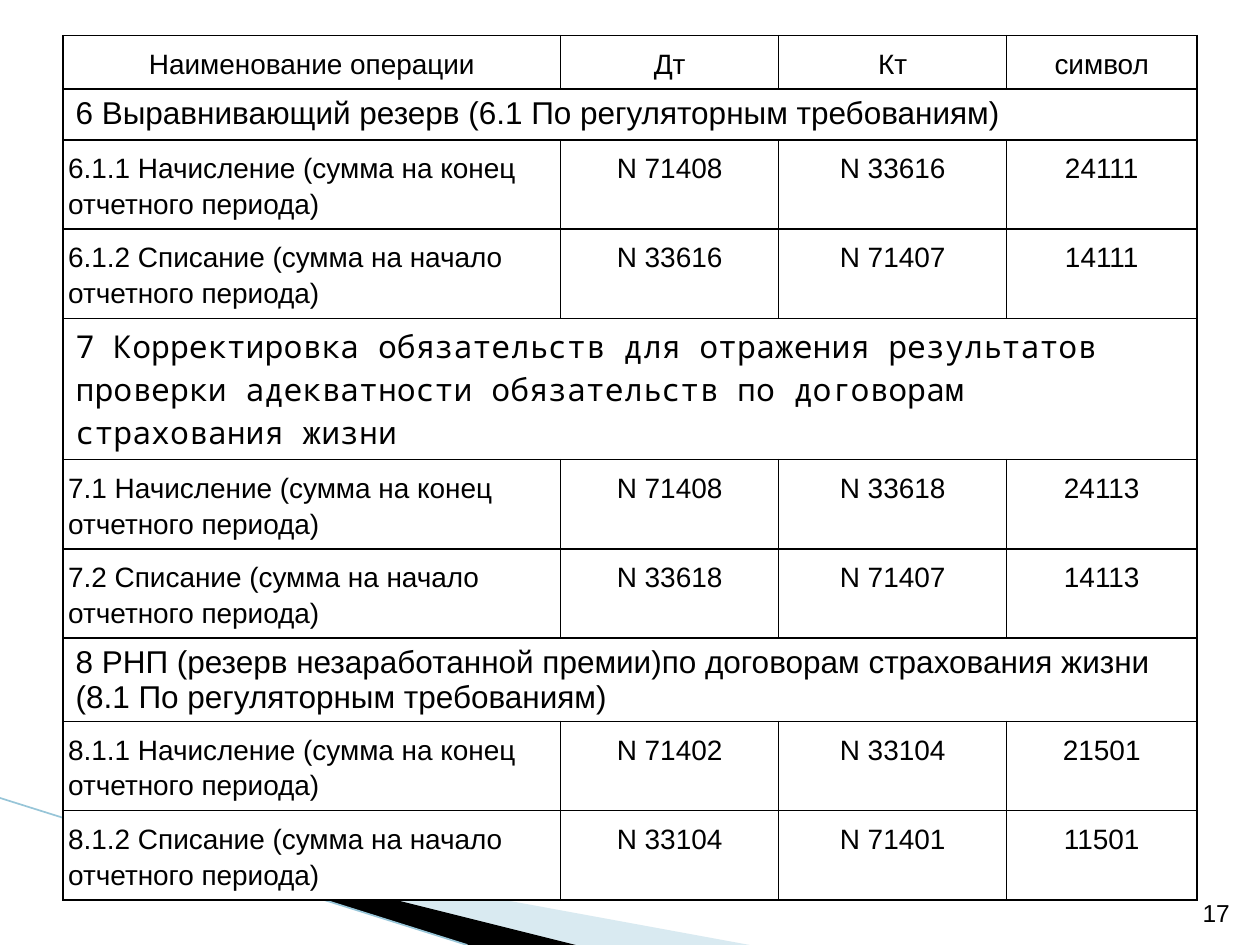
from lxml import etree
from pptx import Presentation
from pptx.dml.color import RGBColor
from pptx.enum.shapes import MSO_CONNECTOR
from pptx.enum.text import MSO_ANCHOR, PP_ALIGN
from pptx.oxml.ns import qn
from pptx.util import Pt

LEFT, CENTER, RIGHT = PP_ALIGN.LEFT, PP_ALIGN.CENTER, PP_ALIGN.RIGHT
BOTTOM = MSO_ANCHOR.BOTTOM
STRAIGHT = MSO_CONNECTOR.STRAIGHT

COLORS = {"ink": "000000", "paper": "FFFFFF", "wedge": "A0CBDC", "line": "97C5D8"}
FONT, MONO = "Arial", "Noto Sans Mono"

# Content: each section has a title, its font and its operations
HEADER = ("Наименование операции", "Дт", "Кт", "символ")
ACCRUAL = "Начисление (сумма на конец отчетного периода)"
RELEASE = "Списание (сумма на начало отчетного периода)"
SECTIONS = [
    ("6 Выравнивающий резерв (6.1 По регуляторным требованиям)", FONT, [
        (f"6.1.1 {ACCRUAL}", "N 71408", "N 33616", "24111"),
        (f"6.1.2 {RELEASE}", "N 33616", "N 71407", "14111"),
    ]),
    ("7 Корректировка обязательств для отражения результатов проверки "
     "адекватности обязательств по договорам страхования жизни", MONO, [
        (f"7.1 {ACCRUAL}", "N 71408", "N 33618", "24113"),
        (f"7.2 {RELEASE}", "N 33618", "N 71407", "14113"),
    ]),
    ("8 РНП (резерв незаработанной премии)по договорам страхования жизни "
     "(8.1 По регуляторным требованиям)", FONT, [
        (f"8.1.1 {ACCRUAL}", "N 71402", "N 33104", "21501"),
        (f"8.1.2 {RELEASE}", "N 33104", "N 71401", "11501"),
    ]),
]
PAGE_NUMBER = "17"

# Layout in points
COLUMN_WIDTHS = (284.4, 124.6, 130.3, 108.7)
HEADER_HEIGHT, OPERATION_HEIGHT = 30.6, 51
SECTION_HEIGHTS = (29, 80.6, 47.6)
WEDGES = [
    ([(39.6, 468.7), (428.4, 540), (328.3, 540), (39.6, 468)], "wedge", 40),
    ([(38.2, 467.3), (329, 540), (267.8, 540), (38.9, 468)], "ink", 100),
]


def color(name):
    return RGBColor.from_string(COLORS[name])


def style_text(para, size, font=FONT, align=LEFT):
    para.alignment = align
    for span in para.runs:
        span.font.size = Pt(size)
        span.font.name = font
        span.font.color.rgb = color("ink")


def add_wedge(page, points, fill, opacity):
    start, *others = [(Pt(x), Pt(y)) for x, y in points]
    builder = page.shapes.build_freeform(*start)
    builder.add_line_segments(others, close=True)
    wedge = builder.convert_to_shape()
    wedge.shadow.inherit = False
    wedge.line.fill.background()
    wedge.fill.solid()
    wedge.fill.fore_color.rgb = color(fill)
    if opacity < 100:
        tint = wedge.fill._xPr.find(f".//{qn('a:srgbClr')}")
        etree.SubElement(tint, qn("a:alpha"), val=str(opacity * 1000))


def style_cell(cell):
    properties = cell._tc.get_or_add_tcPr()
    for side in ("lnL", "lnR", "lnT", "lnB"):
        border = etree.SubElement(properties, qn(f"a:{side}"), w=str(Pt(1)))
        fill = etree.SubElement(border, qn("a:solidFill"))
        etree.SubElement(fill, qn("a:srgbClr"), val=COLORS["ink"])
    cell.fill.solid()
    cell.fill.fore_color.rgb = color("paper")


def fill_row(cells, texts, first_align):
    for column, (cell, text) in enumerate(zip(cells, texts)):
        cell.margin_left = cell.margin_right = Pt(3)
        cell.margin_top = cell.margin_bottom = Pt(5)
        cell.text_frame.text = text
        para = cell.text_frame.paragraphs[0]
        para.line_spacing = 1.15
        style_text(para, 16, align=CENTER if column else first_align)


def fill_section(cells, title, font):
    cells[0].merge(cells[-1])
    cells[0].text_frame.text = title
    style_text(cells[0].text_frame.paragraphs[0], 18, font)


deck = Presentation()
deck.slide_width, deck.slide_height = Pt(720), Pt(540)
page = deck.slides.add_slide(deck.slide_layouts[6])

# Corner decoration
for points, fill, opacity in WEDGES:
    add_wedge(page, points, fill, opacity)
edge = page.shapes.add_connector(STRAIGHT, Pt(0), Pt(456), Pt(267), Pt(540))
edge.line.color.rgb = color("line")
edge.line.width = Pt(0.95)
etree.SubElement(edge._element.spPr, qn("a:effectLst"))

# Table of operations
heights = [HEADER_HEIGHT]
for section_height, (_, _, operations) in zip(SECTION_HEIGHTS, SECTIONS):
    heights += [section_height] + [OPERATION_HEIGHT] * len(operations)
table = page.shapes.add_table(len(heights), len(COLUMN_WIDTHS), Pt(36), Pt(20.4),
                              Pt(sum(COLUMN_WIDTHS)), Pt(sum(heights))).table
for column, width in zip(table.columns, COLUMN_WIDTHS):
    column.width = Pt(width)
for row, height in zip(table.rows, heights):
    row.height = Pt(height)
for cell in table.iter_cells():
    style_cell(cell)

rows = iter(table.rows)
fill_row(list(next(rows).cells), HEADER, CENTER)
for title, font, operations in SECTIONS:
    fill_section(list(next(rows).cells), title, font)
    for operation in operations:
        fill_row(list(next(rows).cells), operation, LEFT)

# Page number
box = page.shapes.add_textbox(Pt(649.4), Pt(508.3), Pt(60.5), Pt(25.2))
box.text_frame.word_wrap = True
box.text_frame.vertical_anchor = BOTTOM
box.text_frame.text = PAGE_NUMBER
style_text(box.text_frame.paragraphs[0], 14, align=RIGHT)

deck.save("out.pptx")
